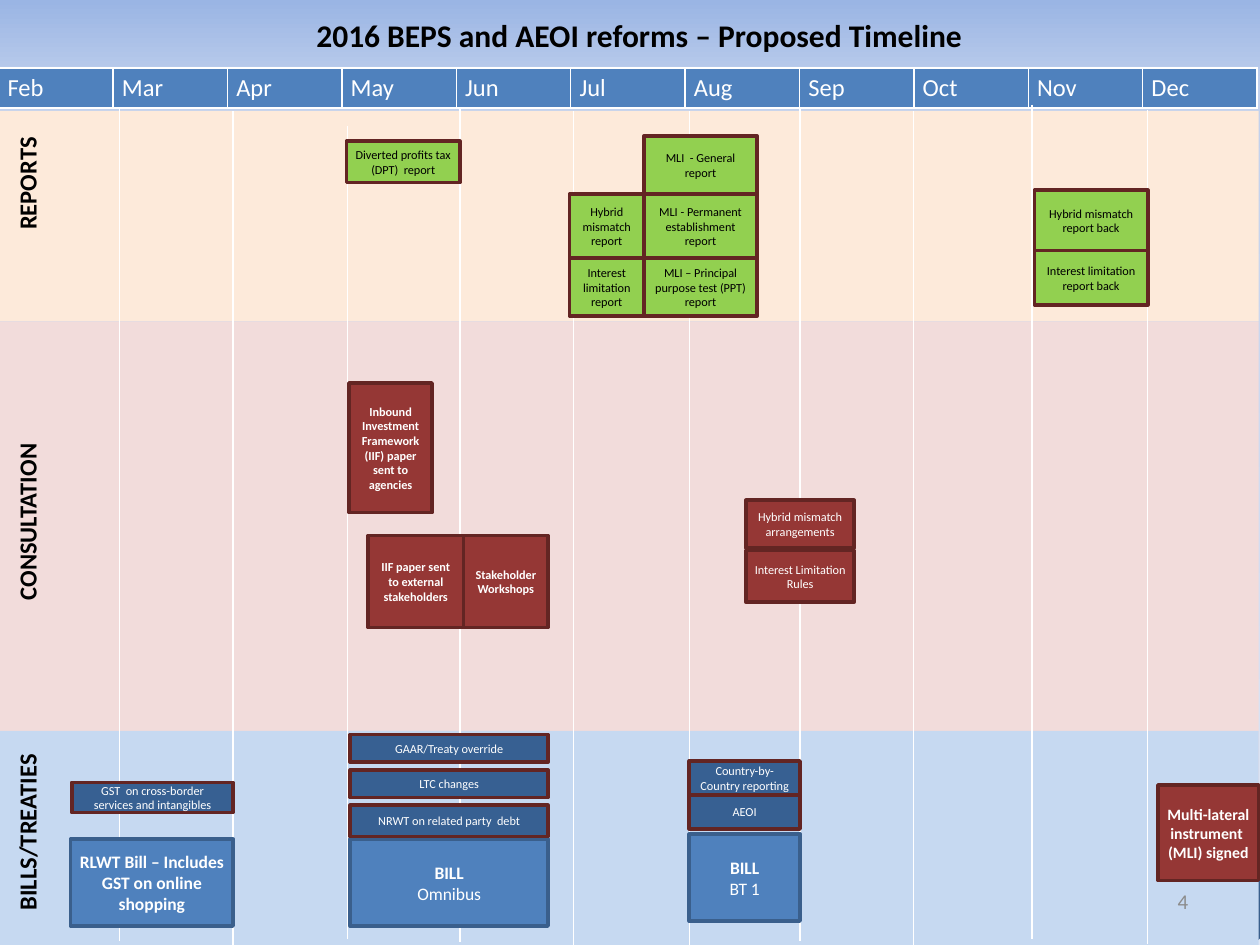
from copy import deepcopy
from typing import NamedTuple

from pptx import Presentation
from pptx.dml.color import RGBColor
from pptx.enum.shapes import MSO_CONNECTOR, MSO_SHAPE
from pptx.enum.text import MSO_ANCHOR, MSO_AUTO_SIZE, PP_ALIGN
from pptx.oxml.ns import qn
from pptx.util import Inches, Pt

RECT, STRAIGHT = MSO_SHAPE.RECTANGLE, MSO_CONNECTOR.STRAIGHT
LEFT, CENTER, RIGHT = PP_ALIGN.LEFT, PP_ALIGN.CENTER, PP_ALIGN.RIGHT
TOP, MIDDLE = MSO_ANCHOR.TOP, MSO_ANCHOR.MIDDLE
NO_AUTOFIT = MSO_AUTO_SIZE.NONE

FONT = "Calibri"
COLORS = {
    "black": "000000", "white": "FFFFFF", "grey": "8C8C8C",
    "blue": "4F81BD", "blue_edge": "3A5F8C", "navy": "376092",
    "green": "92D050", "red": "953735", "maroon": "632523",
    "cream": "FDEADA", "pink": "F2DCDB", "sky": "C6D9F1",
    "bg_top": "9AB5E4", "bg_mid": "C2D1ED", "bg_low": "E1E8F5",
}
MONTHS = ["Feb", "Mar", "Apr", "May", "Jun", "Jul", "Aug", "Sep", "Oct", "Nov", "Dec"]


class Style(NamedTuple):
    fill: str
    edge: str | None = None
    color: str = "white"
    size: float = 7
    bold: bool = False


class Box(NamedTuple):
    style: Style
    left: float
    top: float
    width: float
    height: float
    text: str = ""


class Divider(NamedTuple):
    x: float
    top: float
    bottom: float


REPORT = Style("green", "maroon", "black")
PAPER = Style("red", "maroon", bold=True)
RULES = Style("red", "maroon")
SIGNED = Style("red", "maroon", size=9, bold=True)
ITEM = Style("navy", "maroon")
BILL = Style("blue", "blue_edge", size=10, bold=True)

BANDS = [
    Box(Style("pink"), -0.02, 2.55, 10.01, 4.89),
    Box(BILL, -0.02, 6.45, 10.01, 1),
    Box(Style("cream"), -0.01, 0.88, 10, 1.67),
    Box(Style("sky"), -0.03, 5.8, 10.02, 1.7),
]
DIVIDERS = [
    Divider(0.95, 0.85, 7.47), Divider(1.85, 0.88, 7.5), Divider(2.76, 1, 7.45),
    Divider(3.65, 0.86, 7.48), Divider(4.55, 0.88, 7.5), Divider(5.47, 0.88, 7.5),
    Divider(6.35, 0.85, 7.47), Divider(7.25, 0.88, 7.5), Divider(8.19, 0.83, 7.45),
    Divider(9.11, 0.87, 7.49),
]
EVENTS = [
    # Reports
    Box(REPORT, 2.75, 1.12, 0.9, 0.33, "Diverted profits tax (DPT)  report"),
    Box(REPORT, 5.11, 1.54, 0.9, 0.51, "MLI - Permanent establishment report"),
    Box(REPORT, 5.11, 1.08, 0.9, 0.46, "MLI  - General\nreport"),
    Box(REPORT, 4.52, 1.54, 0.59, 0.51, "Hybrid mismatch report"),
    Box(REPORT, 4.52, 2.05, 0.59, 0.46, "Interest limitation report"),
    Box(REPORT, 5.11, 2.05, 0.9, 0.46, "MLI – Principal purpose test (PPT) report"),
    Box(REPORT, 8.21, 1.51, 0.9, 0.48, "Hybrid mismatch report back"),
    Box(REPORT, 8.21, 1.99, 0.9, 0.43, "Interest limitation report back"),
    # Consultation
    Box(PAPER, 2.77, 3.04, 0.66, 1.03,
        "Inbound Investment Framework (IIF) paper sent to agencies"),
    Box(PAPER, 3.68, 4.25, 0.67, 0.73, "Stakeholder Workshops"),
    Box(PAPER, 2.92, 4.25, 0.76, 0.73, "IIF paper sent to external stakeholders"),
    Box(RULES, 5.92, 4.37, 0.86, 0.41, "Interest Limitation Rules"),
    Box(RULES, 5.92, 3.97, 0.86, 0.38, "Hybrid mismatch arrangements"),
    # Bills and treaties
    Box(BILL, 0.56, 6.66, 1.29, 0.69, "RLWT Bill – Includes GST on online shopping"),
    Box(ITEM, 0.57, 6.21, 1.28, 0.24, "GST  on cross-border services and intangibles"),
    Box(BILL, 2.78, 6.66, 1.57, 0.69, "BILL\nOmnibus"),
    Box(ITEM, 2.78, 6.39, 1.57, 0.25, "NRWT on related party  debt"),
    Box(ITEM, 2.78, 6.11, 1.57, 0.22, "LTC changes"),
    Box(ITEM, 2.78, 5.83, 1.57, 0.22, "GAAR/Treaty override"),
    Box(BILL, 5.47, 6.62, 0.88, 0.69, "BILL\nBT 1"),
    Box(ITEM, 5.47, 6.31, 0.88, 0.27, "AEOI"),
    Box(ITEM, 5.47, 6.04, 0.88, 0.27, "Country-by-Country reporting"),
    Box(SIGNED, 9.19, 6.23, 0.8, 0.76, "Multi-lateral instrument  (MLI) signed"),
]


def rgb(name: str) -> RGBColor:
    return RGBColor.from_string(COLORS[name])


def write(tf, text: str, *, size: float, color: str, bold: bool = False,
          align=LEFT, anchor=TOP, wrap: bool = True) -> None:
    """Write one paragraph per line; bold applies to the first line only."""
    tf.word_wrap, tf.auto_size, tf.vertical_anchor = wrap, NO_AUTOFIT, anchor
    tf.margin_left = tf.margin_right = Inches(0.07)
    tf.margin_top = tf.margin_bottom = Inches(0.04)
    for i, line in enumerate(text.split("\n")):
        p = tf.add_paragraph() if i else tf.paragraphs[0]
        p.alignment = align
        r = p.add_run()
        r.text = line
        r.font.name, r.font.size = FONT, Pt(size)
        r.font.bold = bold and i == 0
        r.font.color.rgb = rgb(color)


def set_background(s) -> None:
    fill = s.background.fill
    fill.gradient()
    fill.gradient_angle = 270
    gs_list = s.element.find(".//" + qn("a:gsLst"))
    gs_list.append(deepcopy(gs_list[-1]))
    stops = [(0, "bg_top"), (0.1, "bg_mid"), (1, "bg_low")]
    for stop, (position, color) in zip(fill.gradient_stops, stops):
        stop.position = position
        stop.color.rgb = rgb(color)


def add_title(s, text: str) -> None:
    sp = s.shapes.title
    sp.left, sp.top, sp.width, sp.height = map(Inches, (2.42, 0.09, 5.31, 0.38))
    write(sp.text_frame, text, size=18, color="black", bold=True, align=CENTER, wrap=False)


def add_months(s) -> None:
    table = s.shapes.add_table(1, len(MONTHS), Inches(-0.01), Inches(0.54),
                               Inches(9.99), Inches(0.31)).table
    for cell, month in zip(table.rows[0].cells, MONTHS):
        cell.fill.solid()
        cell.fill.fore_color.rgb = rgb("blue")
        cell.margin_left = cell.margin_right = Inches(0.07)
        cell.margin_top = cell.margin_bottom = Inches(0.04)
        r = cell.text_frame.paragraphs[0].add_run()
        r.text = month
        r.font.name, r.font.size, r.font.bold = FONT, Pt(14), False
        r.font.color.rgb = rgb("white")


def add_box(s, box: Box) -> None:
    style = box.style
    sp = s.shapes.add_shape(RECT, *map(Inches, box[1:5]))
    sp.shadow.inherit = False
    sp.fill.solid()
    sp.fill.fore_color.rgb = rgb(style.fill)
    if style.edge:
        sp.line.color.rgb = rgb(style.edge)
        sp.line.width = Pt(2)
    else:
        sp.line.fill.background()
    if box.text:
        write(sp.text_frame, box.text, size=style.size, color=style.color,
              bold=style.bold, align=CENTER, anchor=MIDDLE)


def add_divider(s, d: Divider) -> None:
    line = s.shapes.add_connector(STRAIGHT, *map(Inches, (d.x, d.top, d.x, d.bottom)))
    line.line.color.rgb = rgb("white")
    line.line.width = Pt(0.75)
    sp_pr = line._element.spPr
    sp_pr.append(sp_pr.makeelement(qn("a:effectLst"), {}))


def add_band_label(s, text: str, left: float, top: float, width: float) -> None:
    sp = s.shapes.add_textbox(*map(Inches, (left, top, width, 0.31)))
    sp.rotation = 270
    write(sp.text_frame, text, size=14, color="black", bold=True, wrap=False)


def main() -> None:
    prs = Presentation()
    prs.slide_width, prs.slide_height = Inches(10), Inches(7.5)
    s = prs.slides.add_slide(prs.slide_layouts[5])
    set_background(s)

    # Bands, title and month header
    for band in BANDS:
        add_box(s, band)
    add_title(s, "2016 BEPS and AEOI reforms – Proposed Timeline")
    add_months(s)

    # Band labels and month dividers
    add_band_label(s, "REPORTS", -0.24, 1.29, 0.9)
    add_band_label(s, "CONSULTATION", -0.5, 3.97, 1.42)
    add_band_label(s, "BILLS/TREATIES", -0.5, 6.43, 1.42)
    for divider in DIVIDERS:
        add_divider(s, divider)

    # Events and slide number
    for event in EVENTS:
        add_box(s, event)
    number = s.shapes.add_textbox(*map(Inches, (9.11, 6.95, 0.39, 0.4)))
    write(number.text_frame, "4", size=12, color="grey", align=RIGHT, anchor=MIDDLE)
    prs.save("out.pptx")


if __name__ == "__main__":
    main()
